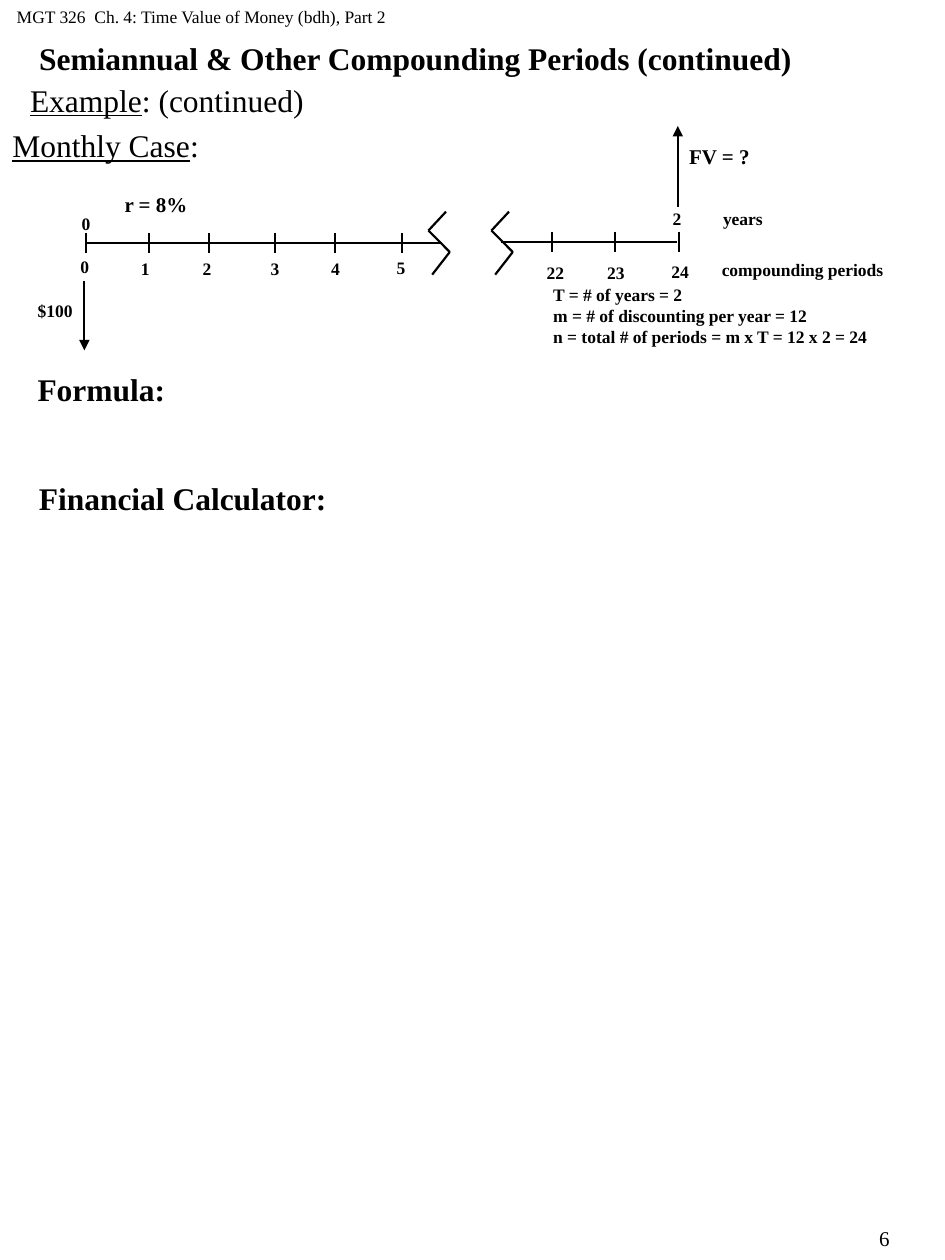
"""Build the monthly compounding slide with its cash flow timeline."""
from dataclasses import dataclass

from lxml.etree import SubElement
from pptx import Presentation
from pptx.dml.color import RGBColor
from pptx.enum.shapes import MSO_CONNECTOR as Link
from pptx.enum.text import MSO_ANCHOR as Anchor, MSO_AUTO_SIZE as Fit, PP_ALIGN as Align
from pptx.oxml.ns import qn
from pptx.shapes.autoshape import Shape
from pptx.slide import Slide
from pptx.util import Inches, Pt


@dataclass(frozen=True)
class Theme:
    ink: RGBColor = RGBColor(0, 0, 0)
    font: str = "Times New Roman"
    small: int = 10
    mid: int = 12
    big: int = 18
    line: float = 1.25


@dataclass(frozen=True)
class Label:
    text: str
    x: float
    y: float
    w: float
    h: float = 0.27
    size: int = Theme.small
    bold: bool = True
    under: str = ""
    wrap: bool = False
    align: Align = Align.LEFT


@dataclass(frozen=True)
class Stroke:
    x1: float
    y1: float
    x2: float
    y2: float
    arrow: bool = False


@dataclass(frozen=True)
class Mark:
    text: str
    x: float
    top: float
    left: float
    low: float


THEME = Theme()

TITLE = Label("Semiannual & Other Compounding Periods (continued)",
              0.21, 0.26, 7.29, 0.4, THEME.big, wrap=True)
NOTES = Label("T = # of years = 2\n"
              "m = # of discounting per year = 12\n"
              "n = total # of periods = m x T = 12 x 2 = 24",
              4.29, 2.2, 3.21, 0.6, wrap=True)

LABELS = [
    Label(" MGT 326  Ch. 4: Time Value of Money (bdh), Part 2",
          0, 0, 3.75, 0.29, bold=False, wrap=True),
    Label("6", 6.54, 9.68, 0.96, 0.32, THEME.mid, False, wrap=True, align=Align.CENTER),
    Label(":", 0, 0.95, 1.68, 0.4, THEME.big, False, "Monthly Case"),
    Label(": (continued)", 0.14, 0.59, 2.4, 0.4, THEME.big, False, "Example"),
    Label("Formula:", 0.2, 2.89, 1.23, 0.4, THEME.big),
    Label("Financial Calculator:", 0.21, 3.75, 2.51, 0.4, THEME.big),
    Label("r = 8%", 0.89, 1.47, 0.71, 0.3, THEME.mid),
    Label("FV = ?", 5.37, 1.09, 0.69, 0.3, THEME.mid),
    Label("0", 0.55, 1.64, 0.27),
    Label("2", 5.24, 1.6, 0.27),
    Label("years", 5.64, 1.6, 0.52),
    Label("compounding periods", 5.63, 2.01, 1.48),
    Label("$100", 0.2, 2.33, 0.48),
]

MARKS = [
    Mark("0", 0.68, 1.85, 0.54, 1.98),
    Mark("1", 1.18, 1.85, 1.02, 2),
    Mark("2", 1.66, 1.85, 1.51, 2),
    Mark("3", 2.18, 1.85, 2.05, 2),
    Mark("4", 2.66, 1.85, 2.53, 2),
    Mark("5", 3.19, 1.85, 3.05, 1.99),
    Mark("22", 4.38, 1.84, 4.24, 2.03),
    Mark("23", 4.88, 1.84, 4.72, 2.03),
    Mark("24", 5.39, 1.84, 5.23, 2.02),
]

STROKES = [
    Stroke(0.68, 1.93, 3.51, 1.93),
    Stroke(3.98, 1.92, 5.37, 1.92),
    Stroke(5.38, 1.64, 5.38, 1, True),
    Stroke(0.67, 2.23, 0.67, 2.78, True),
]

BREAKS = [3.4, 3.9]
TICK = 0.16


def write(shape: Shape, text: str, *, size: int, bold: bool, under: str = "",
          wrap: bool = True, align: Align = Align.LEFT) -> None:
    frame = shape.text_frame
    frame.auto_size = Fit.NONE
    frame.word_wrap = wrap
    frame.vertical_anchor = Anchor.TOP
    for i, row in enumerate(text.split("\n")):
        para = frame.add_paragraph() if i else frame.paragraphs[0]
        para.alignment = align
        para.space_before = Pt(0)
        for part, mark in ((under, True), (row, False)):
            if part:
                run = para.add_run()
                run.text = part
                font = run.font
                font.name, font.size = THEME.font, Pt(size)
                font.bold, font.underline = bold, mark
                font.color.rgb = THEME.ink


def fill(shape: Shape, item: Label) -> None:
    shape.left, shape.top = Inches(item.x), Inches(item.y)
    shape.width, shape.height = Inches(item.w), Inches(item.h)
    write(shape, item.text, size=item.size, bold=item.bold, under=item.under,
          wrap=item.wrap, align=item.align)


def label(slide: Slide, item: Label) -> None:
    fill(slide.shapes.add_textbox(0, 0, 0, 0), item)


def stroke(slide: Slide, item: Stroke) -> None:
    ends = (Inches(v) for v in (item.x1, item.y1, item.x2, item.y2))
    link = slide.shapes.add_connector(Link.STRAIGHT, *ends)
    link.line.color.rgb = THEME.ink
    link.line.width = Pt(THEME.line)
    if item.arrow:
        SubElement(link.line._get_or_add_ln(), qn("a:tailEnd"), type="triangle")
    SubElement(link._element.spPr, qn("a:effectLst"))


def mark(slide: Slide, item: Mark) -> None:
    stroke(slide, Stroke(item.x, item.top, item.x, item.top + TICK))
    label(slide, Label(item.text, item.left, item.low, 0.2 + 0.07 * len(item.text)))


def zigzag(slide: Slide, x: float) -> None:
    pts = [(x + 0.14, 1.68), (x, 1.83), (x + 0.17, 2), (x + 0.03, 2.18)]
    for start, end in zip(pts, pts[1:]):
        stroke(slide, Stroke(*start, *end))


def plain(shape: Shape) -> None:
    for para in shape.text_frame.paragraphs:
        props = para._p.get_or_add_pPr()
        props.set("marL", "0")
        props.set("indent", "0")
        SubElement(props, qn("a:buNone"))


def main() -> None:
    deck = Presentation()
    deck.slide_width, deck.slide_height = Inches(7.5), Inches(10)
    slide = deck.slides.add_slide(deck.slide_layouts[1])
    fill(slide.shapes.title, TITLE)
    notes = slide.placeholders[1]
    fill(notes, NOTES)
    plain(notes)
    for draw, items in ((stroke, STROKES), (zigzag, BREAKS),
                        (mark, MARKS), (label, LABELS)):
        for item in items:
            draw(slide, item)
    deck.save("out.pptx")


if __name__ == "__main__":
    main()
